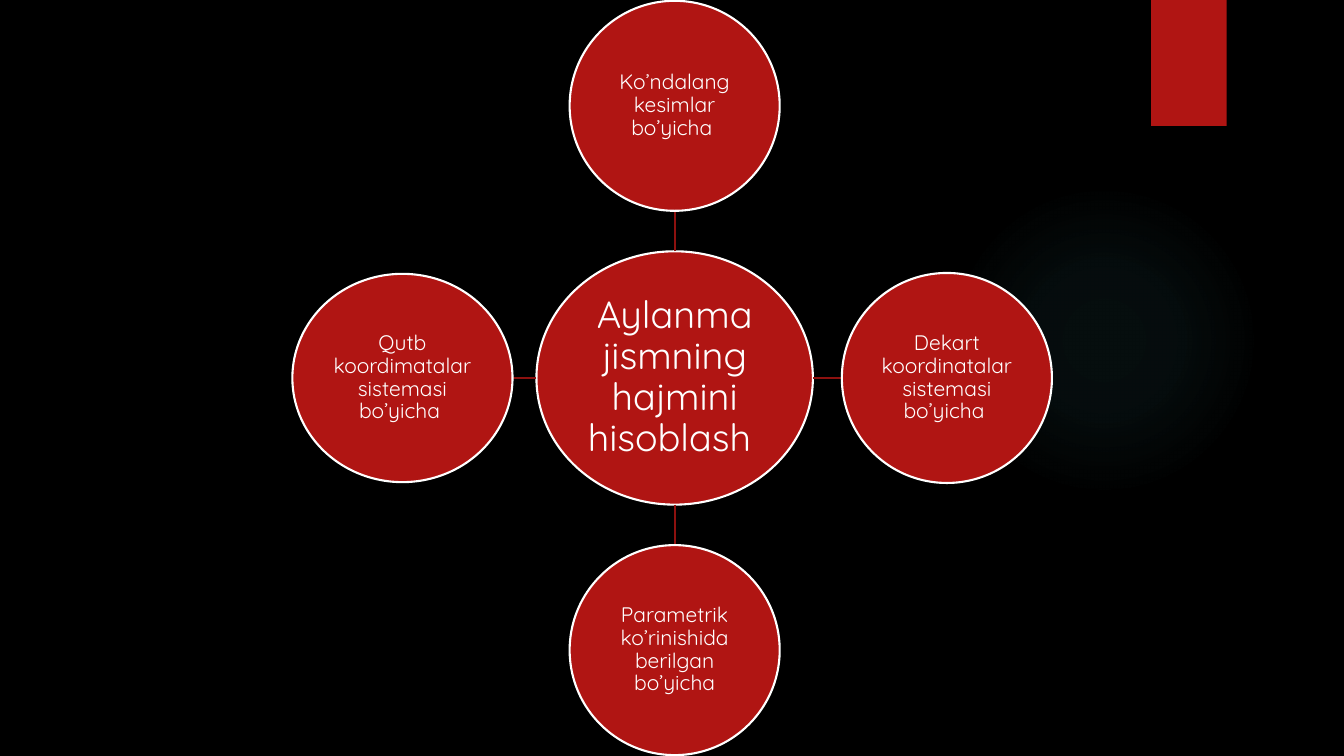
from lxml import etree
from pptx import Presentation
from pptx.dml.color import RGBColor
from pptx.enum.shapes import MSO_CONNECTOR, MSO_SHAPE
from pptx.enum.text import MSO_ANCHOR, PP_ALIGN
from pptx.oxml import parse_xml
from pptx.oxml.ns import nsdecls, qn
from pptx.util import Inches, Pt

STRAIGHT = MSO_CONNECTOR.STRAIGHT
OVAL, RECTANGLE = MSO_SHAPE.OVAL, MSO_SHAPE.RECTANGLE
MIDDLE, CENTER = MSO_ANCHOR.MIDDLE, PP_ALIGN.CENTER

COLORS = {"background": "000000", "red": "B01513", "spoke": "8D110F",
          "white": "FFFFFF", "glow": "50B9C1"}
FONT = "Quicksand"

# Grid of 80 columns by 45 rows, six cells to the inch
CELL = Inches(1) / 6
HUB_COLUMN, HUB_ROW = 40.15, 22.5
HUB_SIZE = (16.45, 15.08)
ORBIT = 16.2
NODE_SIZE = (12.5, 12.5)

# Direction from the hub, size, text
NODES = [
    ((0, -1), NODE_SIZE, "Ko’ndalang kesimlar bo’yicha "),
    ((1, 0), NODE_SIZE, "Dekart koordinatalar sistemasi bo’yicha "),
    ((0, 1), NODE_SIZE, "Parametrik ko’rinishida berilgan bo’yicha"),
    ((-1, 0), (13.1, 12.4), "Qutb koordimatalar sistemasi bo’yicha "),
]


def cells(*counts):
    return [round(count * CELL) for count in counts]


def color(name):
    return RGBColor.from_string(COLORS[name])


def add_plain_shape(slide, kind, column, row, columns, rows):
    shape = slide.shapes.add_shape(kind, *cells(column, row, columns, rows))
    shape.shadow.inherit = False
    shape.fill.solid()
    shape.fill.fore_color.rgb = color("red")
    shape.line.fill.background()
    return shape


def add_glow(slide, column, row, diameter):
    shape = add_plain_shape(slide, OVAL, column, row, diameter, diameter)
    stops = "".join(
        f'<a:gs pos="{position * 1000}"><a:srgbClr val="{COLORS["glow"]}">'
        f'<a:alpha val="{alpha * 1000}"/></a:srgbClr></a:gs>'
        for position, alpha in ((0, 7), (36, 6), (69, 0)))
    gradient = parse_xml(
        f'<a:gradFill {nsdecls("a")}><a:gsLst>{stops}</a:gsLst><a:path path="circle">'
        '<a:fillToRect l="50000" t="50000" r="50000" b="50000"/></a:path></a:gradFill>')
    properties = shape.element.spPr
    properties.replace(properties.find(qn("a:solidFill")), gradient)


def add_circle(slide, center, size, text, font_size, inset):
    column, row = (middle - length / 2 for middle, length in zip(center, size))
    shape = add_plain_shape(slide, OVAL, column, row, *size)
    shape.line.color.rgb = color("white")
    shape.line.width = Pt(1.5)
    frame = shape.text_frame
    frame.word_wrap = True
    frame.vertical_anchor = MIDDLE
    frame.margin_left = frame.margin_right = Inches(inset)
    frame.margin_top = frame.margin_bottom = Inches(inset)
    paragraph = frame.paragraphs[0]
    paragraph.text = text
    paragraph.alignment = CENTER
    paragraph.line_spacing = 0.9
    paragraph.font.name = FONT
    paragraph.font.size = Pt(font_size)
    paragraph.font.color.rgb = color("white")


def add_spoke(slide, direction, node_size):
    across, down = direction
    axis = 0 if across else 1
    start = HUB_SIZE[axis] / 2
    end = ORBIT - node_size[axis] / 2
    points = [position for distance in (start, end) for position in
              (HUB_COLUMN + across * distance, HUB_ROW + down * distance)]
    spoke = slide.shapes.add_connector(STRAIGHT, *cells(*points))
    spoke.line.color.rgb = color("spoke")
    spoke.line.width = Pt(1.5)
    etree.SubElement(spoke.element.spPr, qn("a:effectLst"))


def main():
    presentation = Presentation()
    presentation.slide_width = Inches(13.33)
    presentation.slide_height = Inches(7.5)
    slide = presentation.slides.add_slide(presentation.slide_layouts[6])

    # Backdrop
    slide.background.fill.solid()
    slide.background.fill.fore_color.rgb = color("background")
    add_glow(slide, 56.45, 11, 18.5)
    add_plain_shape(slide, RECTANGLE, 68.5, 0, 4.5, 7.5)

    # Hub with its four nodes
    add_circle(slide, (HUB_COLUMN, HUB_ROW), HUB_SIZE,
               "Aylanma jismning hajmini hisoblash ", 27, 0.02)
    for direction, size, text in NODES:
        add_spoke(slide, direction, size)
        center = (HUB_COLUMN + direction[0] * ORBIT, HUB_ROW + direction[1] * ORBIT)
        add_circle(slide, center, size, text, 15, 0.01)

    presentation.save("out.pptx")


if __name__ == "__main__":
    main()
